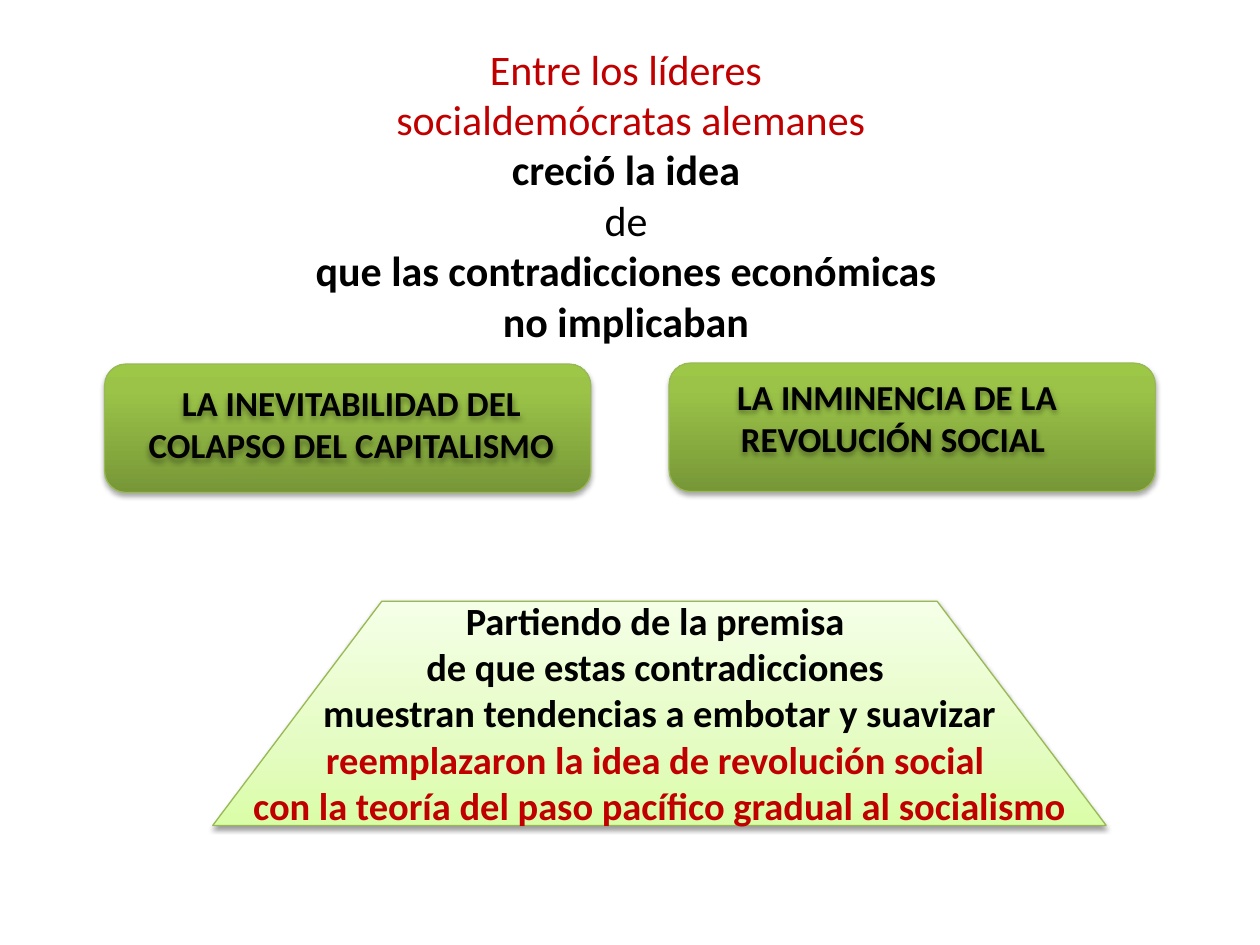
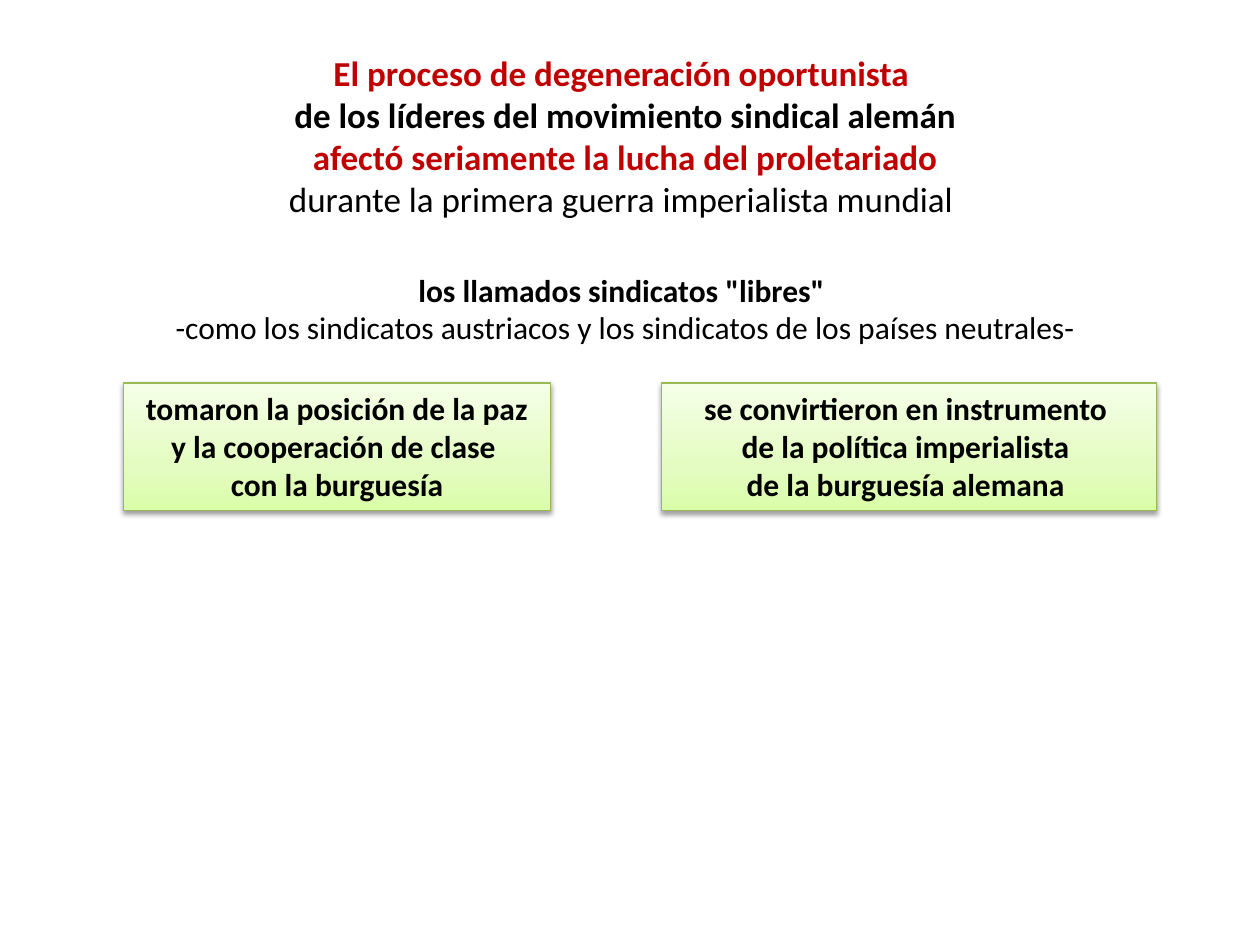
"""Two slides on the opportunist turn of the German social-democratic leaders."""
from lxml import etree
from pptx import Presentation
from pptx.dml.color import RGBColor
from pptx.enum.shapes import MSO_SHAPE
from pptx.enum.text import MSO_ANCHOR, MSO_AUTO_SIZE, PP_ALIGN
from pptx.oxml.ns import qn
from pptx.util import Cm, Pt

ROUNDED, TRAPEZOID, RECTANGLE = MSO_SHAPE.ROUNDED_RECTANGLE, MSO_SHAPE.TRAPEZOID, MSO_SHAPE.RECTANGLE
TOP, CENTER, FIXED = MSO_ANCHOR.TOP, PP_ALIGN.CENTER, MSO_AUTO_SIZE.NONE
TITLE_ONLY = 5
FONT = "Calibri"
COLORS = {"ink": "000000", "accent": "C00000", "outline": "98B955", "shadow": "000000"}
GRADIENTS = {
    "strong": [(0, "779737"), (80, "9BC348"), (100, "9DC746")],
    "pale": [(0, "DAFDA7"), (35, "E4FCC2"), (100, "F5FFE7")],
}
SHADOWS = {"strong": (35, 1.8), "pale": (38, 1.6)}


def write(shape, lines, size, box=None):
    """Fill a shape with centred lines, each given as (text, color, bold)."""
    if box:
        shape.left, shape.top, shape.width, shape.height = map(Cm, box)
    frame = shape.text_frame
    frame.word_wrap, frame.auto_size, frame.vertical_anchor = True, FIXED, TOP
    for number, (text, color, bold) in enumerate(lines):
        paragraph = frame.add_paragraph() if number else frame.paragraphs[0]
        paragraph.alignment = CENTER
        run = paragraph.add_run()
        run.text = text
        run.font.name, run.font.size, run.font.bold = FONT, Pt(size), bold
        run.font.color.rgb = RGBColor.from_string(COLORS[color])


def cast_shadow(shape, opacity, distance):
    """Give a shape a soft shadow straight below it."""
    shape.shadow.inherit = False
    effects = shape._element.spPr.find(qn("a:effectLst"))
    shadow = etree.SubElement(effects, qn("a:outerShdw"), blurRad=str(Pt(3.1)),
                              dist=str(Pt(distance)), dir="5400000", rotWithShape="0")
    color = etree.SubElement(shadow, qn("a:srgbClr"), val=COLORS["shadow"])
    etree.SubElement(color, qn("a:alpha"), val=str(opacity * 1000))


deck = Presentation()
deck.slide_width, deck.slide_height = Cm(25.4), Cm(19.05)
ideas, unions = [deck.slides.add_slide(deck.slide_layouts[TITLE_ONLY]) for _ in range(2)]

write(ideas.shapes.title, [
    ("Entre los líderes ", "accent", False),
    ("socialdemócratas alemanes", "accent", False),
    ("creció la idea ", "ink", True),
    ("de ", "ink", False),
    ("que las contradicciones económicas ", "ink", True),
    ("no implicaban ", "ink", True),
], 24, (2.11, 0.74, 21.21, 6.4))
write(unions.shapes.title, [
    ("El proceso de degeneración oportunista ", "accent", True),
    ("de los líderes del movimiento sindical alemán", "ink", True),
    (" afectó seriamente la lucha del proletariado ", "accent", True),
    ("durante la primera guerra imperialista mundial ", "ink", False),
], 20, (1.9, 0.91, 21.41, 3.68))

panels = [
    (ideas, ROUNDED, "strong", (2.11, 7.34, 9.8, 2.59), []),
    (ideas, ROUNDED, "strong", (13.49, 7.32, 9.8, 2.59), []),
    (ideas, TRAPEZOID, "pale", (4.29, 12.12, 18.01, 4.52), []),
    (unions, RECTANGLE, "pale", (2.49, 7.72, 8.61, 2.57),
     ["tomaron la posición de la paz", "y la cooperación de clase ", "con la burguesía"]),
    (unions, RECTANGLE, "pale", (13.34, 7.72, 9.98, 2.57),
     ["se convirtieron en instrumento ", "de la política imperialista ", "de la burguesía alemana "]),
]
for slide, outline, tone, box, lines in panels:
    panel = slide.shapes.add_shape(outline, *map(Cm, box))
    if outline == TRAPEZOID:
        panel.adjustments[0] = 0.754
    panel.line.color.rgb = RGBColor.from_string(COLORS["outline"])
    panel.line.width = Pt(0.75)
    gradient = etree.Element(qn("a:gradFill"), rotWithShape="1")
    stops = etree.SubElement(gradient, qn("a:gsLst"))
    for position, color in GRADIENTS[tone]:
        stop = etree.SubElement(stops, qn("a:gs"), pos=str(position * 1000))
        etree.SubElement(stop, qn("a:srgbClr"), val=color)
    etree.SubElement(gradient, qn("a:lin"), ang="16200000", scaled="0")
    panel._element.spPr.find(qn("a:ln")).addprevious(gradient)
    cast_shadow(panel, *SHADOWS[tone])
    write(panel, [(line, "ink", True) for line in lines], 18)

premise = [
    ("Partiendo de la premisa ", "ink", True),
    ("de que estas contradicciones ", "ink", True),
    ("muestran tendencias a embotar y suavizar", "ink", True),
    ("reemplazaron la idea de revolución social ", "accent", True),
    ("con la teoría del paso pacífico gradual al socialismo", "accent", True),
]
free_unions = [
    ('los llamados sindicatos "libres" ', "ink", True),
    ("-como los sindicatos austriacos y los sindicatos de los países neutrales-", "ink", False),
]
collapse = [("LA INEVITABILIDAD DEL COLAPSO DEL CAPITALISMO", "ink", True)]
revolution = [("LA INMINENCIA DE LA REVOLUCIÓN SOCIAL ", "ink", True)]
captions = [
    (ideas, premise, 22, (2.69, 11.91, 21.21, 4.95), False),
    (ideas, collapse, 20, (2.69, 7.57, 8.79, 1.96), True),
    (ideas, revolution, 20, (13.87, 7.44, 8.43, 1.96), True),
    (unions, free_unions, 18, (1.9, 5.33, 21.41, 1.8), False),
]
for slide, lines, size, box, shaded in captions:
    caption = slide.shapes.add_textbox(*map(Cm, box))
    write(caption, lines, size)
    if shaded:
        cast_shadow(caption, *SHADOWS["strong"])

deck.save("out.pptx")
